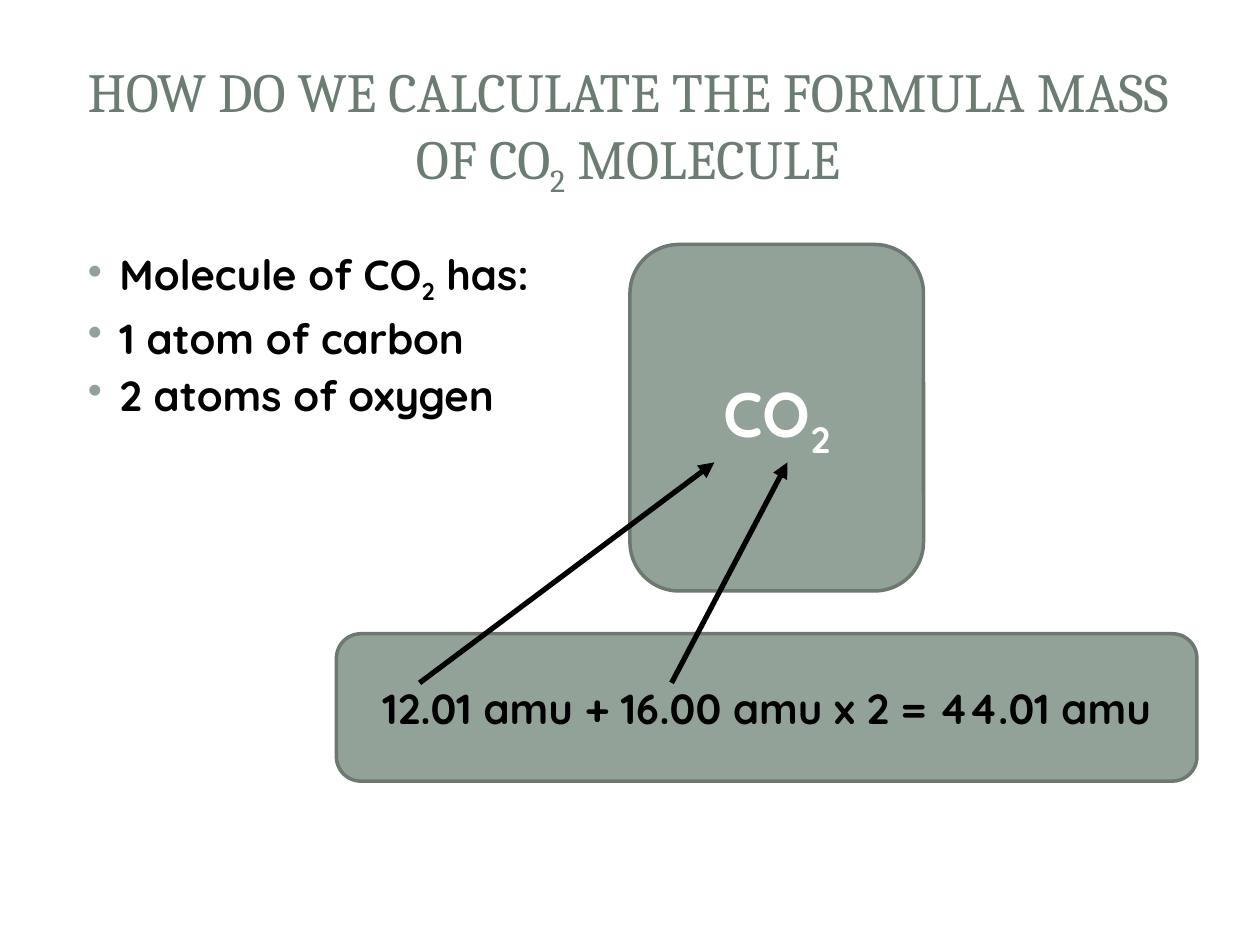
from dataclasses import dataclass

from lxml.etree import SubElement
from pptx import Presentation
from pptx.dml.color import RGBColor
from pptx.enum.shapes import MSO_CONNECTOR as CONN, MSO_SHAPE as SHAPE
from pptx.enum.text import MSO_ANCHOR as ANCHOR, PP_ALIGN as ALIGN
from pptx.oxml.ns import qn
from pptx.util import Inches, Pt


@dataclass(frozen=True)
class Theme:
    """Colours, fonts and type sizes of the slide."""
    title: RGBColor = RGBColor(0x6B, 0x7D, 0x72)
    sage: RGBColor = RGBColor(0x93, 0xA2, 0x99)
    edge: RGBColor = RGBColor(0x6D, 0x78, 0x71)
    black: RGBColor = RGBColor(0, 0, 0)
    white: RGBColor = RGBColor(255, 255, 255)
    heading: str = "Cambria"
    body: str = "Quicksand"
    title_size: float = 31.5
    body_size: float = 24
    formula_size: float = 36


THEME = Theme()


def write(p, text, font, size, color, bold=True, align=ALIGN.LEFT):
    """Fill a paragraph, lowering every second part split by '_'."""
    p.alignment = align
    p.font.name, p.font.size, p.font.bold = font, Pt(size), bold
    p.font.color.rgb = color
    for i, part in enumerate(text.split("_")):
        r = p.add_run()
        r.text = part
        if i % 2:
            r._r.get_or_add_rPr().set("baseline", "-25000")


def add_bullet(p, color):
    """Give a paragraph a hanging coloured bullet."""
    pPr = p._p.get_or_add_pPr()
    pPr.set("marL", str(Inches(0.38)))
    pPr.set("indent", str(Inches(-0.25)))
    clr = pPr.makeelement(qn("a:buClr"))
    SubElement(clr, qn("a:srgbClr"), val=str(color))
    char = pPr.makeelement(qn("a:buChar"), char="•")
    pPr.find(qn("a:defRPr")).addprevious(clr)
    clr.addnext(char)


def add_text_frame(s, x, y, w, h):
    """Add a wrapping text box and return its frame."""
    tf = s.shapes.add_textbox(Inches(x), Inches(y), Inches(w), Inches(h)).text_frame
    tf.word_wrap = True
    return tf


def add_title(s, x, y, w, h, text):
    """Place the centred heading."""
    tf = add_text_frame(s, x, y, w, h)
    tf.vertical_anchor = ANCHOR.MIDDLE
    write(tf.paragraphs[0], text, THEME.heading, THEME.title_size,
          THEME.title, bold=False, align=ALIGN.CENTER)


def add_bullets(s, x, y, w, h, lines):
    """Place the bulleted list."""
    tf = add_text_frame(s, x, y, w, h)
    for i, line in enumerate(lines):
        p = tf.add_paragraph() if i else tf.paragraphs[0]
        write(p, line, THEME.body, THEME.body_size, THEME.black)
        p.space_before = Pt(4)
        add_bullet(p, THEME.sage)


def add_panel(s, x, y, w, h, text, size, color):
    """Place a rounded sage panel with centred text."""
    sp = s.shapes.add_shape(SHAPE.ROUNDED_RECTANGLE, Inches(x), Inches(y),
                            Inches(w), Inches(h))
    sp.shadow.inherit = False
    sp.fill.solid()
    sp.fill.fore_color.rgb = THEME.sage
    sp.line.color.rgb, sp.line.width = THEME.edge, Pt(2)
    tf = sp.text_frame
    tf.word_wrap, tf.vertical_anchor = True, ANCHOR.MIDDLE
    write(tf.paragraphs[0], text, THEME.body, size, color, align=ALIGN.CENTER)


def add_arrow(s, x1, y1, x2, y2):
    """Draw a black arrow from the first point to the second."""
    arrow = s.shapes.add_connector(CONN.STRAIGHT, Inches(x1), Inches(y1),
                                   Inches(x2), Inches(y2))
    arrow.line.color.rgb, arrow.line.width = THEME.black, Pt(3)
    SubElement(arrow.line._get_or_add_ln(), qn("a:tailEnd"), type="triangle")
    SubElement(arrow._element.spPr, qn("a:effectLst"))


def add_mass_diagram(s, x, y):
    """Place the molecule, its mass sum and the arrows linking them."""
    add_panel(s, x + 2.33, y, 2.33, 2.75, "CO_2", THEME.formula_size, THEME.white)
    add_panel(s, x, y + 3.09, 6.83, 1.17, "12.01 amu + 16.00 amu x 2 = 44.01 amu",
              THEME.body_size, THEME.black)
    for start, end in ((0.66, 3), (2.66, 3.58)):
        add_arrow(s, x + start, y + 3.48, x + end, y + 1.73)


def main():
    """Build and save the slide."""
    prs = Presentation()
    prs.slide_width, prs.slide_height = Inches(10), Inches(7.5)
    s = prs.slides.add_slide(prs.slide_layouts[6])
    add_title(s, 0.47, 0.45, 9.03, 1.14,
              "HOW DO WE CALCULATE THE FORMULA MASS OF CO_2_ MOLECULE")
    add_bullets(s, 0.47, 1.92, 9.03, 5.08,
                ("Molecule of CO_2_ has:", "1 atom of carbon", "2 atoms of oxygen"))
    add_mass_diagram(s, 2.67, 1.94)
    prs.save("out.pptx")


if __name__ == "__main__":
    main()
